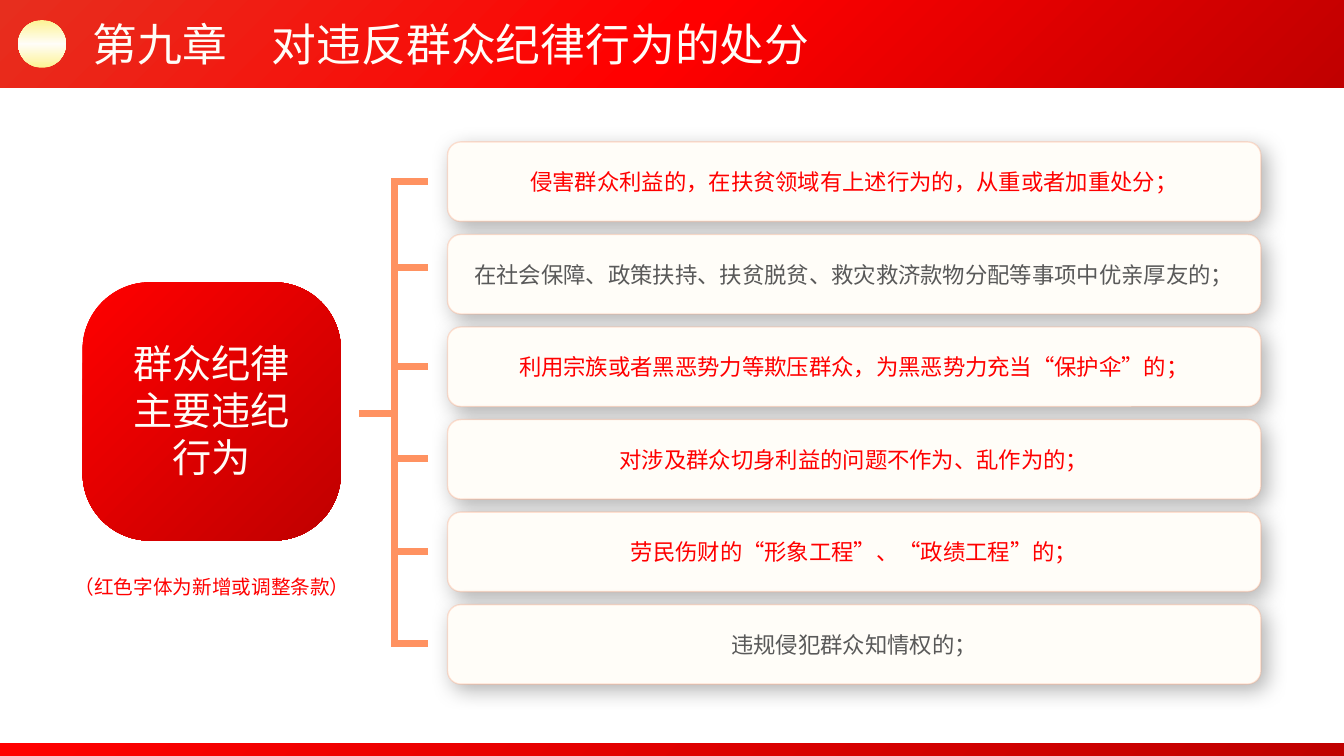
from copy import deepcopy

from lxml import etree
from pptx import Presentation
from pptx.dml.color import RGBColor
from pptx.enum import lang, shapes, text
from pptx.oxml import parse_xml
from pptx.oxml import ns
from pptx.util import Pt

COLORS = {
    "red": "FF0000", "dark_red": "C00000", "bright_red": "E72E1E",
    "cream": "FFFDF8", "gold": "FDF394", "gray": "595959",
    "card_line": "FFA075", "bracket": "FF9261",
}
RGB = {name: RGBColor.from_string(value) for name, value in COLORS.items()}
FONT = "Noto Sans CJK SC"


def add_gradient_shape(kind, left, top, width, height, names, angle=315):
    """Add a borderless shape with evenly spaced gradient stops."""
    shape = page.shapes.add_shape(kind, Pt(left), Pt(top), Pt(width), Pt(height))
    shape.shadow.inherit = False
    shape.line.fill.background()
    shape.fill.gradient()
    shape.fill.gradient_angle = angle
    stop_list = shape.element.spPr.find(".//" + ns.qn("a:gsLst"))
    while len(stop_list) < len(names):
        stop_list.append(deepcopy(stop_list[0]))
    for index, (stop, name) in enumerate(zip(shape.fill.gradient_stops, names)):
        stop.position = index / (len(names) - 1)
        stop.color.rgb = RGB[name]
    return shape


def write(shape, content, size, color, align=text.PP_ALIGN.CENTER):
    shape.text_frame.text = content
    for para in shape.text_frame.paragraphs:
        para.alignment = align
        for span in para.runs:
            span.font.size = Pt(size)
            span.font.name = FONT
            span.font.language_id = lang.MSO_LANGUAGE_ID.SIMPLIFIED_CHINESE
            span.font.color.rgb = RGB[color]
            etree.SubElement(span.font._element, ns.qn("a:ea"), typeface=FONT)


deck = Presentation()
deck.slide_width, deck.slide_height = Pt(960), Pt(540)
page = deck.slides.add_slide(deck.slide_layouts[6])
preset = shapes.MSO_SHAPE

# Header and footer
add_gradient_shape(preset.RECTANGLE, 0, 531, 960, 9, ["red", "dark_red"])
add_gradient_shape(preset.RECTANGLE, 0, 0, 960, 62.8, ["bright_red", "red", "dark_red"])
add_gradient_shape(preset.OVAL, 13, 14.4, 34, 34, ["gold", "cream", "gold"], 270)
title = page.shapes.add_textbox(Pt(59), Pt(8.6), Pt(531.4), Pt(46))
title.text_frame.word_wrap = False
write(title, "第九章\u3000对违反群众纪律行为的处分".replace("\u3000", "　"), 32, "cream",
      text.PP_ALIGN.LEFT)

# Topic
topic = add_gradient_shape(preset.ROUNDED_RECTANGLE, 59, 201.6, 184.5, 184.5,
                           ["red", "dark_red"])
topic.adjustments[0] = 0.26
topic_label = page.shapes.add_textbox(Pt(67.7), Pt(239), Pt(167), Pt(108.7))
topic_label.text_frame.word_wrap = True
write(topic_label, "群众纪律\n主要违纪\n行为", 28, "cream")

# Cards
cards = [
    ("侵害群众利益的，在扶贫领域有上述行为的，从重或者加重处分；", "red"),
    ("在社会保障、政策扶持、扶贫脱贫、救灾救济款物分配等事项中优亲厚友的；", "gray"),
    ("利用宗族或者黑恶势力等欺压群众，为黑恶势力充当“保护伞”的；", "red"),
    ("对涉及群众切身利益的问题不作为、乱作为的；", "red"),
    ("劳民伤财的“形象工程”、“政绩工程”的；", "red"),
    ("违规侵犯群众知情权的；", "gray"),
]
shadow_xml = (
    f'<a:effectLst {ns.nsdecls("a")}>'
    '<a:outerShdw blurRad="190500" dist="63500" dir="2700000" algn="tl" rotWithShape="0">'
    '<a:srgbClr val="000000"><a:alpha val="30000"/></a:srgbClr>'
    '</a:outerShdw></a:effectLst>'
)
for index, (content, color) in enumerate(cards):
    card = page.shapes.add_shape(preset.ROUNDED_RECTANGLE, Pt(319.7),
                                 Pt(101.4 + 66.1 * index), Pt(581), Pt(56.8))
    card.fill.solid()
    card.fill.fore_color.rgb = RGB["cream"]
    card.line.color.rgb = RGB["card_line"]
    card.line.width = Pt(1)
    line_color = card.element.spPr.find(ns.qn("a:ln")).find(".//" + ns.qn("a:srgbClr"))
    etree.SubElement(line_color, ns.qn("a:alpha"), val="30000")
    card.element.spPr.append(parse_xml(shadow_xml))
    card.text_frame.vertical_anchor = text.MSO_ANCHOR.MIDDLE
    write(card, content, 16, color)

note = page.shapes.add_textbox(Pt(27.4), Pt(406.8), Pt(248.4), Pt(24.2))
note.text_frame.word_wrap = True
write(note, "（红色字体为新增或调整条款）", 14, "red")

# Bracket
spine, tip, stem = 281.5, 303, 259
branch_heights = [129.6, 190.8, 262, 327.6, 393.8, 460]
bracket = [(spine, branch_heights[0], spine, branch_heights[-1]),
           (280, 295.2, stem, 295.2)]
bracket += [(tip, height, spine, height) for height in branch_heights]
for ends in bracket:
    line = page.shapes.add_connector(shapes.MSO_CONNECTOR.STRAIGHT, *map(Pt, ends))
    line.line.color.rgb = RGB["bracket"]
    line.line.width = Pt(5)
    line.element.spPr.find(ns.qn("a:ln")).set("cap", "sq")
    etree.SubElement(line.element.spPr, ns.qn("a:effectLst"))

deck.save("out.pptx")
